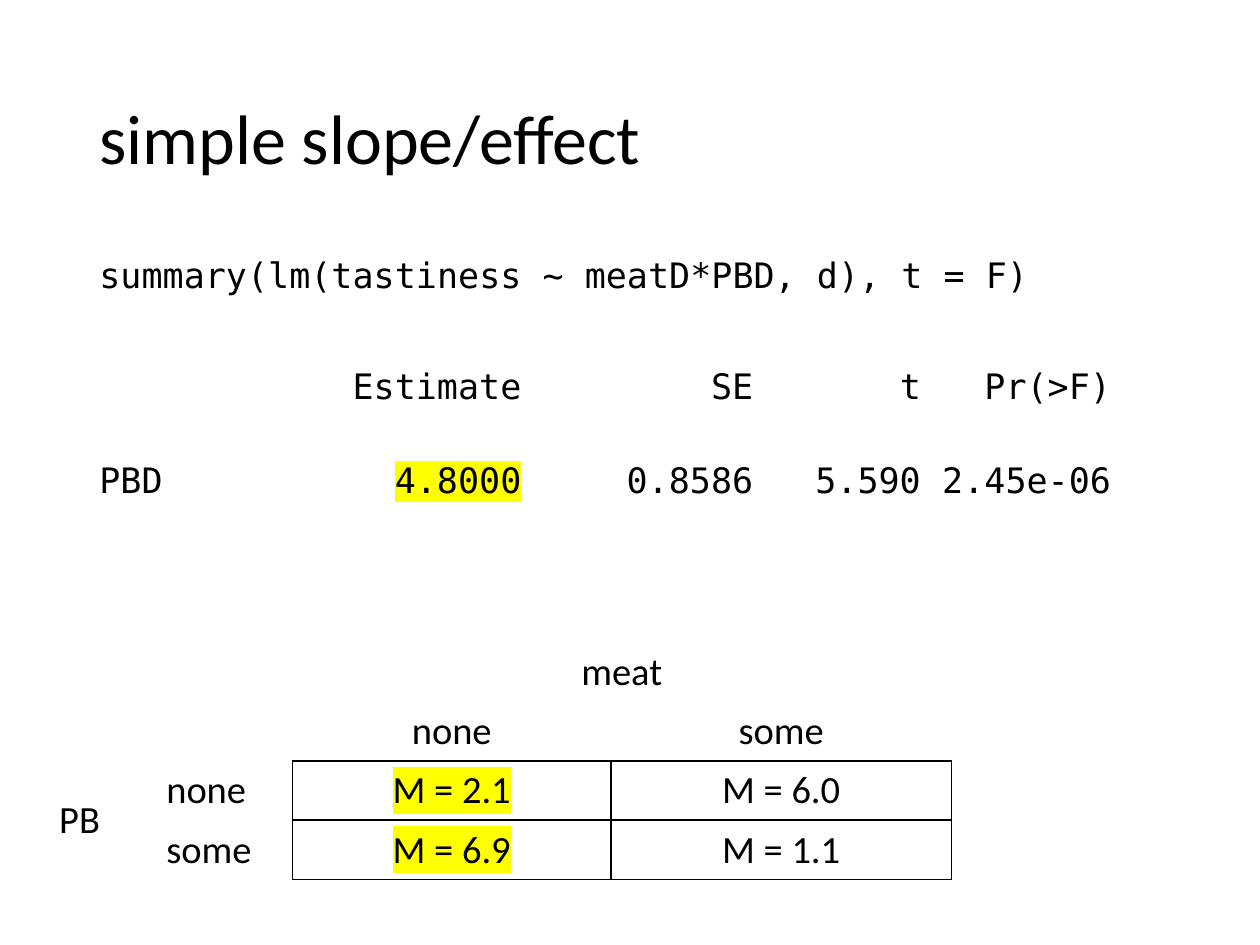
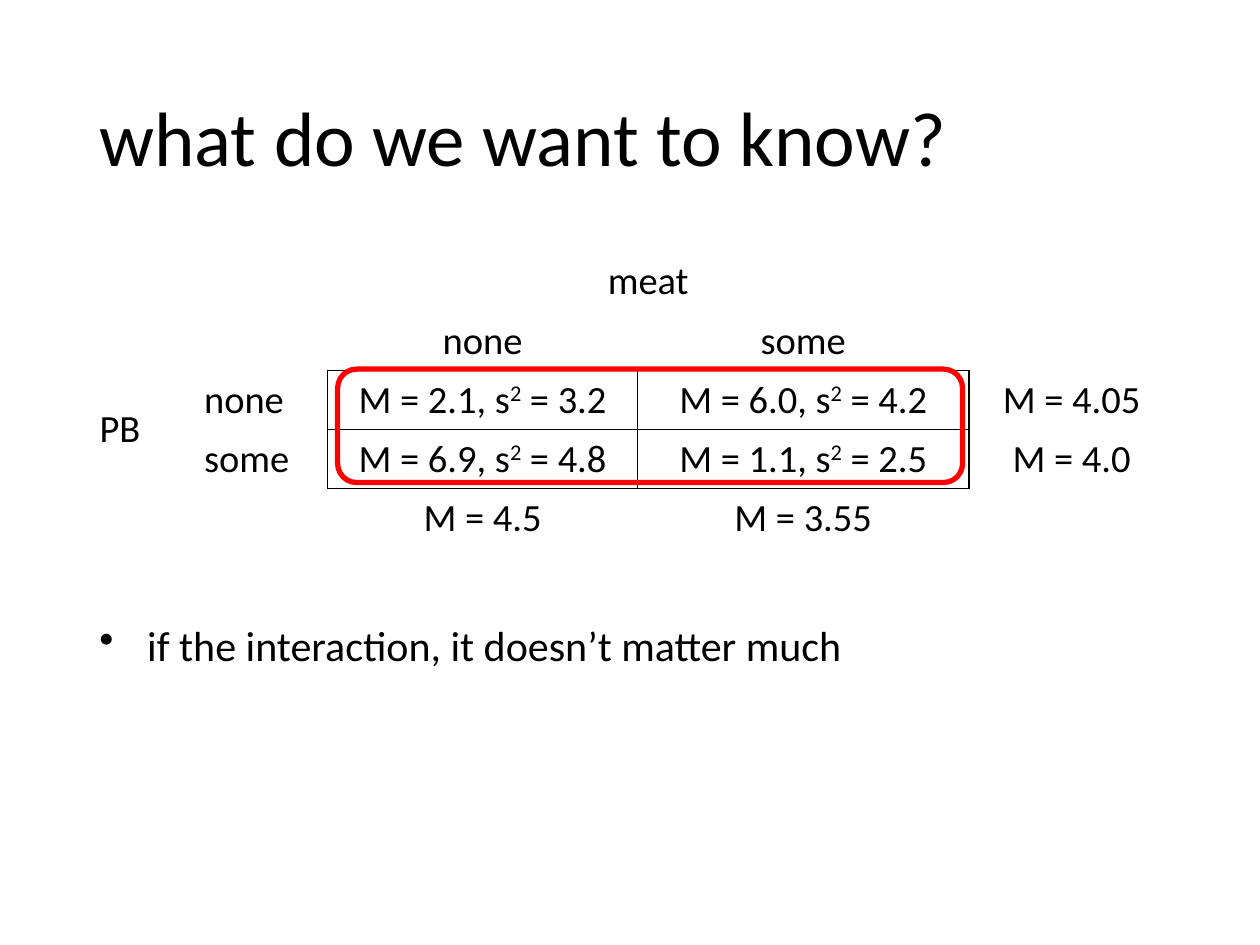
"""Build two slides on simple effects in a two-by-two design of meat and PB."""
from dataclasses import dataclass

from lxml.etree import SubElement
from pptx import Presentation
from pptx.dml.color import RGBColor
from pptx.enum.shapes import MSO_SHAPE
from pptx.enum.text import MSO_ANCHOR, PP_ALIGN
from pptx.oxml.ns import qn
from pptx.util import Pt

PX = 9144
NO_STYLE = "{2D5ABB26-0587-4C30-8999-92F81FD0307C}"


@dataclass(frozen=True)
class Theme:
    ink: str = "000000"
    accent: str = "FF0000"
    marker: str = "FFFF00"
    body_font: str = "Calibri"
    code_font: str = "DejaVu Sans Mono"
    bullet_size: int = 24
    cell_size: int = 22
    code_size: int = 20
    border: int = 1
    frame: int = 3


theme = Theme()


def write(paragraph, pieces, size, font=theme.body_font):
    """Fill a paragraph with (text, mark) pieces in one font."""
    paragraph.font.size = Pt(size)
    paragraph.font.name = font
    paragraph.font.color.rgb = RGBColor.from_string(theme.ink)
    for text, mark in pieces:
        run = paragraph.add_run()
        run.text = text
        if mark == "highlight":
            highlight = SubElement(run._r.get_or_add_rPr(), qn("a:highlight"))
            SubElement(highlight, qn("a:srgbClr"), val=theme.marker)
        elif mark == "superscript":
            run._r.get_or_add_rPr().set("baseline", "30000")


def add_text_frame(slide, left, top, width, height):
    """Add a wrapping text box and return its text frame."""
    box = slide.shapes.add_textbox(left * PX, top * PX, width * PX, height * PX)
    box.text_frame.word_wrap = True
    return box.text_frame


def squared(mean, variance):
    return [(f"M = {mean}, s", ""), ("2", "superscript"), (f" = {variance}", "")]


presentation = Presentation()
presentation.slide_width = 1000 * PX
presentation.slide_height = 750 * PX

labels = {
    (0, 2): [("meat", "")],
    (1, 2): [("none", "")],
    (1, 3): [("some", "")],
    (2, 0): [("PB", "")],
    (2, 1): [("none", "")],
    (3, 1): [("some", "")],
}
effect_cells = {
    (2, 2): [("M = 2.1", "highlight")],
    (2, 3): [("M = 6.0", "")],
    (3, 2): [("M = 6.9", "highlight")],
    (3, 3): [("M = 1.1", "")],
}
question_cells = {
    (2, 2): squared("2.1", "3.2"),
    (2, 3): squared("6.0", "4.2"),
    (3, 2): squared("6.9", "4.8"),
    (3, 3): squared("1.1", "2.5"),
    (2, 4): [("M = 4.05", "")],
    (3, 4): [("M = 4.0", "")],
    (4, 2): [("M = 4.5", "")],
    (4, 3): [("M = 3.55", "")],
}
pages = [
    ("simple slope/effect", 40, 37, 510, [85, 110, 253, 270, 167], effect_cells),
    ("what do we want to know?", 44, 69, 200, [83, 108, 246, 263, 163], question_cells),
]
row_height = 47
box_edges = (2, 3, 4)
box_cells = (2, 3)

for title, title_size, left, top, column_widths, values in pages:
    slide = presentation.slides.add_slide(presentation.slide_layouts[6])
    title_frame = add_text_frame(slide, 69, 40, 862, 145)
    title_frame.vertical_anchor = MSO_ANCHOR.MIDDLE
    title_frame.paragraphs[0].line_spacing = 0.9
    write(title_frame.paragraphs[0], [(title, "")], title_size)

    table_shape = slide.shapes.add_table(
        5, 5, left * PX, top * PX, sum(column_widths) * PX, 5 * row_height * PX)
    for style in table_shape.element.iter(qn("a:tableStyleId")):
        style.text = NO_STYLE
    table = table_shape.table
    table.first_row = table.horz_banding = False
    for column, width in zip(table.columns, column_widths):
        column.width = width * PX
    for row in table.rows:
        row.height = row_height * PX
    table.cell(0, 2).merge(table.cell(0, 3))
    table.cell(2, 0).merge(table.cell(3, 0))
    table.cell(2, 0).vertical_anchor = MSO_ANCHOR.MIDDLE

    contents = labels | values
    for row in range(5):
        for column in range(5):
            cell = table.cell(row, column)
            sides = {
                "a:lnL": column in box_edges and row in box_cells,
                "a:lnR": column + 1 in box_edges and row in box_cells,
                "a:lnT": row in box_edges and column in box_cells,
                "a:lnB": row + 1 in box_edges and column in box_cells,
            }
            properties = cell._tc.get_or_add_tcPr()
            for side, drawn in sides.items():
                if drawn:
                    line = SubElement(properties, qn(side), w=str(Pt(theme.border)))
                    fill = SubElement(line, qn("a:solidFill"))
                    SubElement(fill, qn("a:srgbClr"), val=theme.ink)
            cell.fill.background()
            paragraph = cell.text_frame.paragraphs[0]
            if column >= 2:
                paragraph.alignment = PP_ALIGN.CENTER
            write(paragraph, contents.get((row, column), []), theme.cell_size)

effect_slide, question_slide = presentation.slides

code_lines = [
    (0, [("summary(lm(tastiness ~ meatD*PBD, d), t = F)", "")]),
    (42, [("\tEstimate\tSE\tt\tPr(>F)", "")]),
    (32, [("PBD\t", ""), ("4.8000", "highlight"), ("\t0.8586\t5.590\t2.45e-06", "")]),
]
code_frame = add_text_frame(effect_slide, 69, 200, 862, 300)
for number, (space_before, pieces) in enumerate(code_lines):
    paragraph = code_frame.add_paragraph() if number else code_frame.paragraphs[0]
    paragraph.line_spacing = 0.9
    paragraph.space_before = Pt(space_before)
    if number:
        tabs = SubElement(paragraph._p.get_or_add_pPr(), qn("a:tabLst"))
        for stop in (335, 519, 652, 803):
            SubElement(tabs, qn("a:tab"), pos=str(stop * PX), algn="r")
    write(paragraph, pieces, theme.code_size, theme.code_font)

note = add_text_frame(question_slide, 69, 487, 862, 50).paragraphs[0]
note_properties = note._p.get_or_add_pPr()
note_properties.set("marL", str(38 * PX))
note_properties.set("indent", str(-38 * PX))
SubElement(note_properties, qn("a:buChar"), char="•")
write(note, [("if the interaction, it doesn’t matter much", "")], theme.bullet_size)

interaction_frame = question_slide.shapes.add_shape(
    MSO_SHAPE.ROUNDED_RECTANGLE, 268 * PX, 293 * PX, 496 * PX, 90 * PX)
interaction_frame.shadow.inherit = False
interaction_frame.fill.background()
interaction_frame.line.color.rgb = RGBColor.from_string(theme.accent)
interaction_frame.line.width = Pt(theme.frame)

presentation.save("out.pptx")
